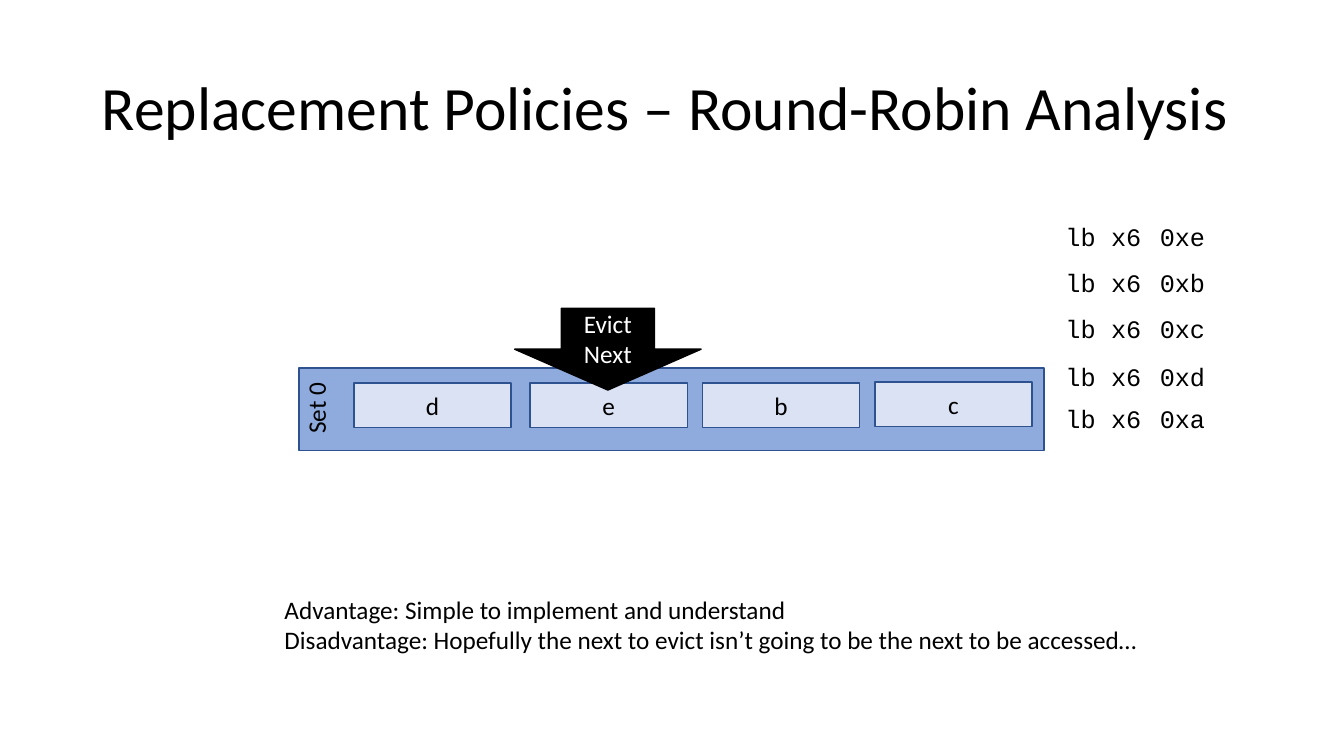
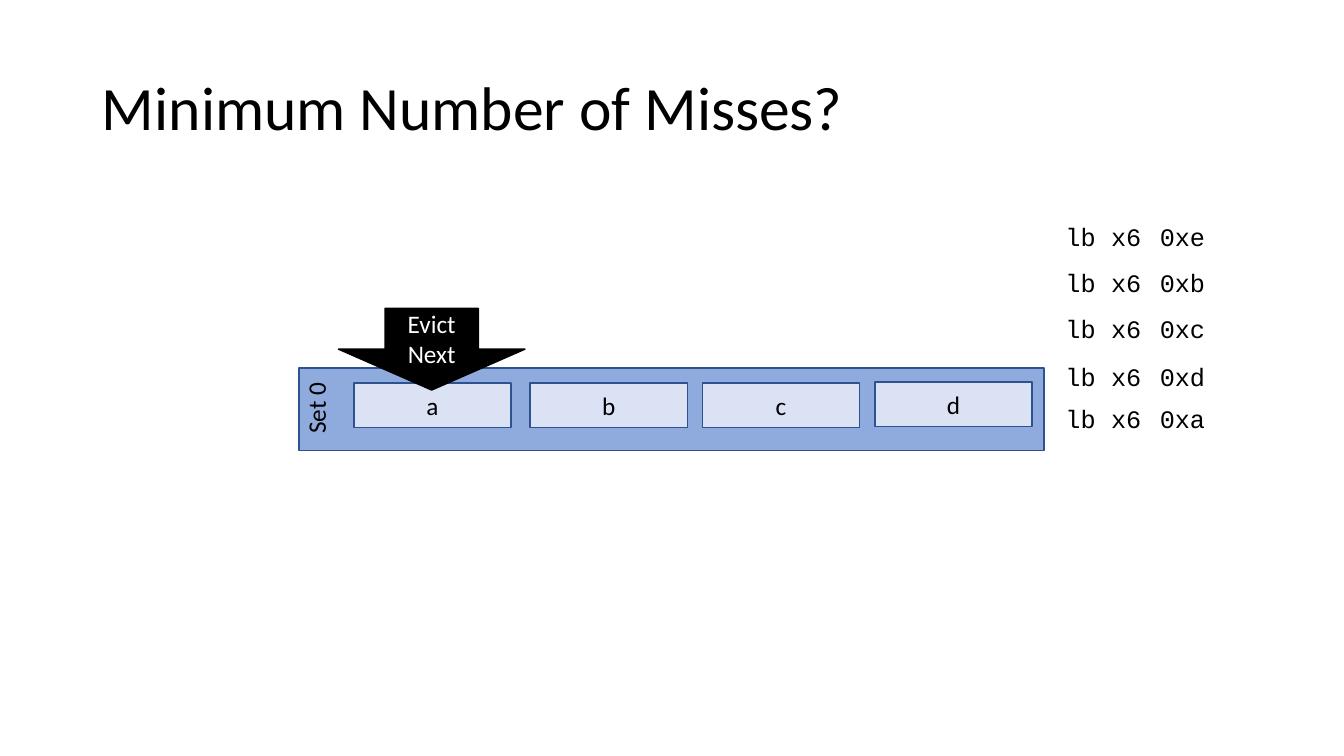
import pptx
import pptx.dml.color
import pptx.enum.shapes
import pptx.enum.text
import pptx.util

Cm = pptx.util.Cm
Pt = pptx.util.Pt
Shape = pptx.enum.shapes.MSO_SHAPE
Align = pptx.enum.text.PP_ALIGN
Anchor = pptx.enum.text.MSO_ANCHOR

COLOURS = {
    "text": "000000",
    "arrow": "000000",
    "arrow_text": "FFFFFF",
    "set": "8FAADC",
    "way": "DAE2F3",
    "outline": "2E528F",
}
WAY_LEFTS = [8.92, 13.36, 17.7, 22.05]
WAY_TOPS = [9.65, 9.65, 9.65, 9.63]
LOADS = ["0xe", "0xb", "0xc", "0xd", "0xa"]
LOAD_HEIGHTS = [1.04, 1.17, 1.19, 1.14, 0.99]
LOAD_MARGINS = [0, 0.12, 0.13, 0.15, 0.07]
LOAD_WIDTHS = [1.04, 1.14, 1.42]
LOAD_ALIGNMENTS = [Align.LEFT, Align.CENTER, Align.RIGHT]


def apply_format(target, values):
    for name, value in values.items():
        setattr(target, name, value)


def colour(name):
    return pptx.dml.color.RGBColor.from_string(COLOURS[name])


class Deck:
    body = {"name": "Calibri", "size": Pt(18)}
    heading = {"name": "Calibri", "size": Pt(44)}
    code = {"name": "Courier New", "size": Pt(18)}
    frame = {
        "margin_left": 0,
        "margin_top": 0,
        "margin_right": 0,
        "margin_bottom": 0,
        "word_wrap": True,
        "auto_size": pptx.enum.text.MSO_AUTO_SIZE.NONE,
        "vertical_anchor": Anchor.TOP,
    }

    def __init__(self):
        self.presentation = pptx.Presentation()
        self.presentation.slide_width = Cm(33.87)
        self.presentation.slide_height = Cm(19.05)
        self.slide = None

    def fill_text(self, text_frame, text, font=None, color="text", **layout):
        text_frame.text = text
        for paragraph in text_frame.paragraphs:
            apply_format(paragraph, layout)
            for run in paragraph.runs:
                apply_format(run.font, font or self.body)
                run.font.color.rgb = colour(color)

    def start(self, heading):
        self.slide = self.presentation.slides.add_slide(self.presentation.slide_layouts[5])
        title = self.slide.shapes.title
        apply_format(title, {"left": Cm(1.02), "top": Cm(0.61), "width": Cm(31.83), "height": Cm(3.28)})
        margins = {"margin_left": Cm(1.55), "margin_top": Cm(1.12)}
        apply_format(title.text_frame, {**self.frame, **margins})
        self.fill_text(title.text_frame, heading, self.heading, alignment=Align.LEFT)

    def box(self, kind, left, top, width, height, fill, outline):
        shape = self.slide.shapes.add_shape(kind, Cm(left), Cm(top), Cm(width), Cm(height))
        shape.shadow.inherit = False
        shape.fill.solid()
        shape.fill.fore_color.rgb = colour(fill)
        shape.line.color.rgb = colour(outline)
        shape.line.width = Pt(1)
        apply_format(shape.text_frame, self.frame)
        return shape

    def text(self, text, left, top, width, height, **layout):
        shape = self.slide.shapes.add_textbox(Cm(left), Cm(top), Cm(width), Cm(height))
        apply_format(shape.text_frame, self.frame)
        self.fill_text(shape.text_frame, text, **layout)
        return shape

    def cache_set(self, blocks, evicted):
        self.box(Shape.RECTANGLE, 7.54, 9.27, 18.77, 2.08, "set", "outline")
        label = self.text("Set 0", 7.7, 9.58, 0.71, 1.35, line_spacing=Pt(18.1))
        label.element.txBody.bodyPr.set("vert", "vert270")
        for block, left, top in zip(blocks, WAY_LEFTS, WAY_TOPS):
            way = self.box(Shape.RECTANGLE, left, top, 3.96, 1.12, "way", "outline")
            way.text_frame.vertical_anchor = Anchor.MIDDLE
            self.fill_text(way.text_frame, block, alignment=Align.CENTER)
        arrow_left = WAY_LEFTS[blocks.index(evicted)] - 0.39
        arrow = self.box(Shape.DOWN_ARROW, arrow_left, 7.77, 4.7, 2.06, "arrow", "arrow")
        self.fill_text(arrow.text_frame, "Evict\nNext", color="arrow_text", alignment=Align.CENTER)

    def loads(self):
        table = self.slide.shapes.add_table(
            len(LOADS), len(LOAD_WIDTHS), Cm(26.77), Cm(5.67), Cm(sum(LOAD_WIDTHS)), Cm(sum(LOAD_HEIGHTS))
        ).table
        apply_format(table, {"first_row": False, "horz_banding": False})
        for column, width in zip(table.columns, LOAD_WIDTHS):
            column.width = Cm(width)
        for row, address, height, margin in zip(table.rows, LOADS, LOAD_HEIGHTS, LOAD_MARGINS):
            row.height = Cm(height)
            for index, text in enumerate(["lb", "x6", address]):
                cell = row.cells[index]
                cell.fill.background()
                margins = {
                    "margin_left": Cm(0 if index else 0.08),
                    "margin_top": Cm(margin),
                    "margin_right": 0,
                    "margin_bottom": 0,
                }
                apply_format(cell, margins)
                self.fill_text(cell.text_frame, text, self.code, alignment=LOAD_ALIGNMENTS[index])


def main():
    deck = Deck()

    deck.start("Replacement Policies – Round-Robin Analysis")
    deck.cache_set("debc", "e")
    deck.text(
        "Advantage: Simple to implement and understand\n"
        "Disadvantage: Hopefully the next to evict isn’t going to be the next to be accessed…",
        7.17, 14.97, 22.2, 1.6,
    )
    deck.loads()

    deck.start("Minimum Number of Misses?")
    deck.loads()
    deck.cache_set("abcd", "a")

    deck.presentation.save("out.pptx")


if __name__ == "__main__":
    main()
